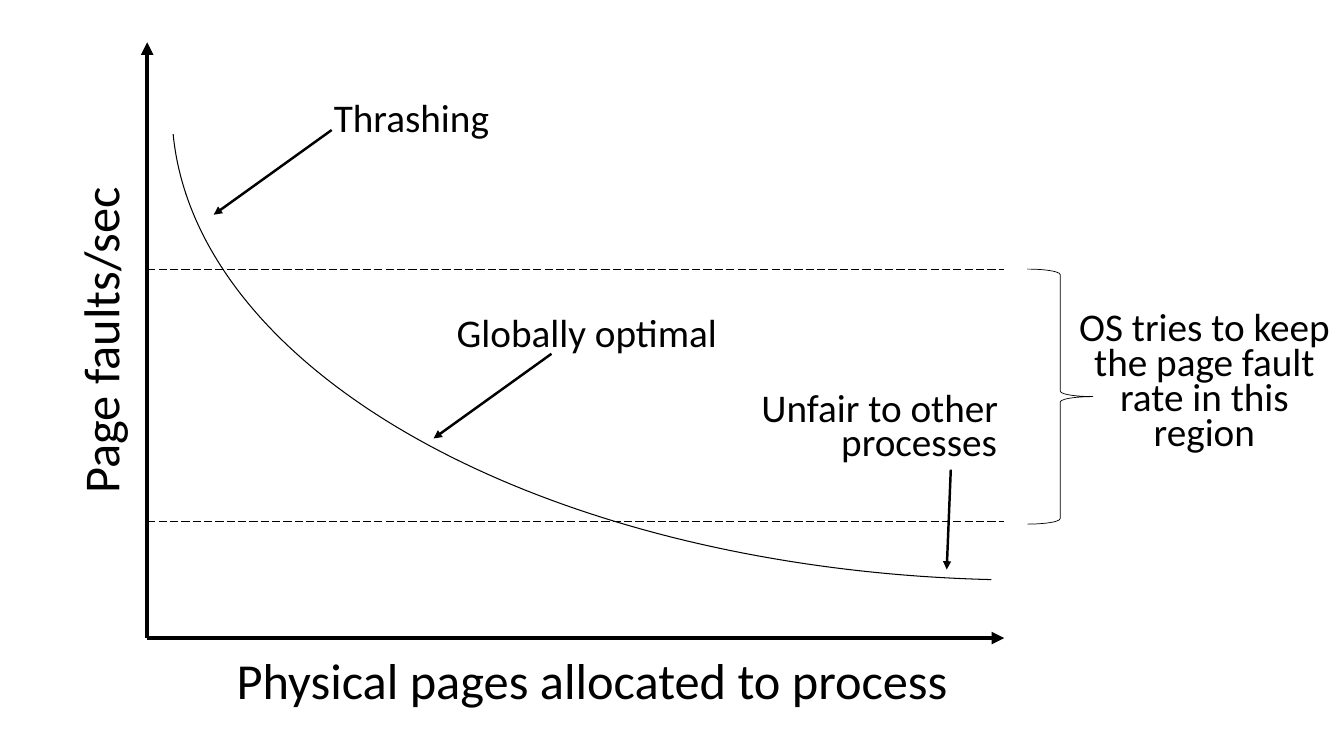
import pptx
import pptx.dml.color
import pptx.enum.dml
import pptx.enum.shapes
import pptx.enum.text
import pptx.oxml.ns
import pptx.util
from lxml import etree

SCALE = 9144


def px(length):
    return pptx.util.Emu(length * SCALE)


def colour(hex_code):
    return pptx.dml.color.RGBColor.from_string(hex_code)


class FaultRateDiagram:
    """Holds the style and the slide on which the diagram is drawn."""

    font = "Calibri"
    ink = "000000"

    def __init__(self, slide):
        self.slide = slide

    def stroke(self, line, weight):
        line.color.rgb = colour(self.ink)
        line.width = pptx.util.Pt(weight)

    def line(self, start, end, weight, arrow=False, dashed=False):
        connector = self.slide.shapes.add_connector(
            pptx.enum.shapes.MSO_CONNECTOR.STRAIGHT,
            *(px(coordinate) for coordinate in (*start, *end)))
        self.stroke(connector.line, weight)
        if dashed:
            connector.line.dash_style = pptx.enum.dml.MSO_LINE.LONG_DASH
        properties = connector._element.spPr
        if arrow:
            outline = properties.find(pptx.oxml.ns.qn("a:ln"))
            etree.SubElement(outline, pptx.oxml.ns.qn("a:tailEnd"), type="triangle")
        etree.SubElement(properties, pptx.oxml.ns.qn("a:effectLst"))

    def text(self, wording, left, top, width, height, size=28, rotation=0, spacing=None):
        box = self.slide.shapes.add_textbox(px(left), px(top), px(width), px(height))
        box.rotation = rotation
        frame = box.text_frame
        frame.word_wrap = True
        frame.auto_size = pptx.enum.text.MSO_AUTO_SIZE.SHAPE_TO_FIT_TEXT
        paragraph = frame.paragraphs[0]
        paragraph.alignment = pptx.enum.text.PP_ALIGN.CENTER
        if spacing:
            paragraph.line_spacing = pptx.util.Pt(spacing)
        run = paragraph.add_run()
        run.text = wording
        run.font.name = self.font
        run.font.size = pptx.util.Pt(size)
        run.font.color.rgb = colour(self.ink)

    def outline(self, preset, left, top, width, height, weight):
        shape = self.slide.shapes.add_shape(
            preset, px(left), px(top), px(width), px(height))
        shape.shadow.inherit = False
        shape.fill.background()
        self.stroke(shape.line, weight)
        return shape

    def curve(self, left, top, width, height, angles, weight):
        arc = self.outline(
            pptx.enum.shapes.MSO_SHAPE.ARC, left, top, width, height, weight)
        for index, degrees in enumerate(angles):
            arc.adjustments[index] = degrees * 0.6
        arc.rotation = 270
        arc._element.spPr.xfrm.set("flipH", "1")

    def brace(self, left, top, width, height, weight):
        self.outline(
            pptx.enum.shapes.MSO_SHAPE.RIGHT_BRACE, left, top, width, height, weight)


def main():
    presentation = pptx.Presentation()
    presentation.slide_width = px(1333)
    presentation.slide_height = px(750)
    diagram = FaultRateDiagram(
        presentation.slides.add_slide(presentation.slide_layouts[6]))

    axis_left, axis_right, axis_top, axis_bottom = 146, 996, 42, 633
    origin = (axis_left, axis_bottom)
    for axis_end in ((axis_left, axis_top), (axis_right, axis_bottom)):
        diagram.line(origin, axis_end, 3, arrow=True)
    diagram.text("Page faults/sec", -101, 302, 400, 71, size=36, rotation=270)
    diagram.text("Physical pages allocated to process", 196, 639, 783, 71, size=36)

    for threshold in (517, 267):
        diagram.line((axis_left, threshold), (axis_right, threshold), 0.75, dashed=True)
    diagram.curve(554, -742, 934, 1701, (271.66, 355.38), 0.75)

    for start, end in (
        ((329, 129), (212, 213)),
        ((943, 466), (939, 565)),
        ((547, 351), (430, 435)),
    ):
        diagram.line(start, end, 1.75, arrow=True)
    for wording, left, top, width in (
        ("Thrashing", 287, 88, 242),
        ("Unfair to other", 735, 375, 275),
        ("processes", 774, 409, 275),
        ("Globally optimal", 430, 301, 304),
    ):
        diagram.text(wording, left, top, width, 57)

    diagram.brace(1019, 267, 65, 253, 0.5)
    diagram.text("OS tries to keep the page fault rate in this region",
                 1057, 307, 275, 152, spacing=25)
    presentation.save("out.pptx")


if __name__ == "__main__":
    main()
